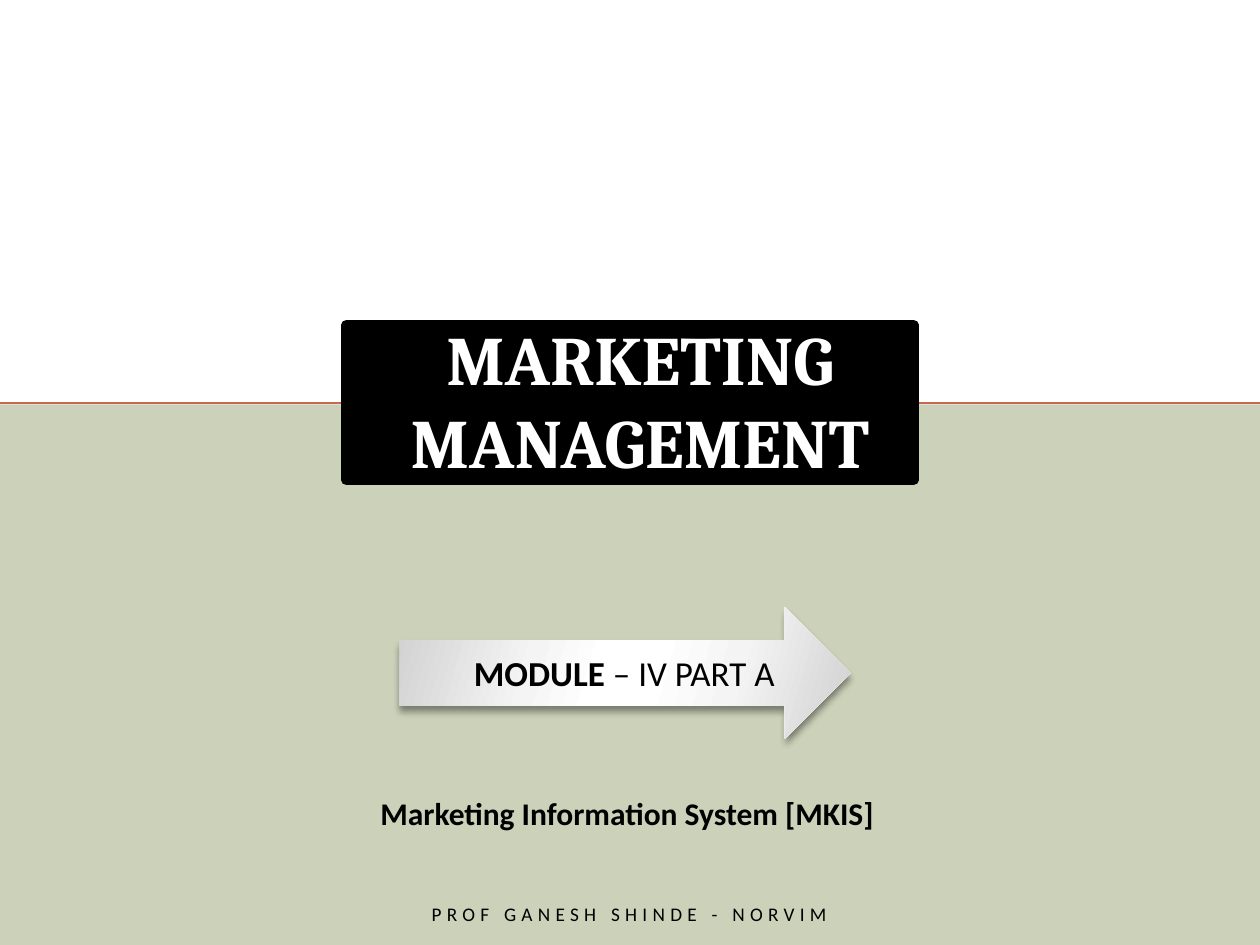
"""Build the opening slide of a marketing management module."""
from lxml import etree
from pptx import Presentation
from pptx.dml.color import RGBColor
from pptx.enum.shapes import MSO_CONNECTOR, MSO_SHAPE
from pptx.enum.text import MSO_ANCHOR, MSO_AUTO_SIZE, PP_ALIGN
from pptx.oxml import parse_xml
from pptx.oxml.ns import qn
from pptx.util import Inches, Pt

RECTANGLE, RIGHT_ARROW = MSO_SHAPE.RECTANGLE, MSO_SHAPE.RIGHT_ARROW
STRAIGHT = MSO_CONNECTOR.STRAIGHT
MIDDLE, BOTTOM = MSO_ANCHOR.MIDDLE, MSO_ANCHOR.BOTTOM
CENTER = PP_ALIGN.CENTER
NO_FIT, GROW = MSO_AUTO_SIZE.NONE, MSO_AUTO_SIZE.SHAPE_TO_FIT_TEXT

BLACK = RGBColor(0x00, 0x00, 0x00)
WHITE = RGBColor(0xFF, 0xFF, 0xFF)
SAGE = RGBColor(0xCC, 0xD1, 0xB9)
RUST = RGBColor(0xC6, 0x69, 0x51)
SILVER = RGBColor(0xD1, 0xD1, 0xD1)
PEARL = RGBColor(0xF4, 0xF4, 0xF4)
SHEEN = [(0, SILVER), (30, PEARL), (45, WHITE), (55, WHITE), (73, PEARL), (100, SILVER)]
DRAWING_NS = "http://schemas.openxmlformats.org/drawingml/2006/main"

deck = Presentation()
deck.slide_width, deck.slide_height = Inches(10), Inches(7.5)
slide = deck.slides.add_slide(deck.slide_layouts[5])
shapes = slide.shapes
slide.background.fill.solid()
slide.background.fill.fore_color.rgb = SAGE


def add_block(preset, left, top, width, height, color):
    block = shapes.add_shape(preset, Inches(left), Inches(top), Inches(width), Inches(height))
    block.shadow.inherit = False
    block.fill.solid()
    block.fill.fore_color.rgb = color
    block.line.fill.background()
    return block


def add_label(left, top, width, height, words, size, bold):
    label = shapes.add_textbox(Inches(left), Inches(top), Inches(width), Inches(height))
    label.text_frame.word_wrap = True
    paragraph = label.text_frame.paragraphs[0]
    paragraph.text = words
    paragraph.font.name, paragraph.font.size = "Calibri", Pt(size)
    paragraph.font.bold, paragraph.font.color.rgb = bold, BLACK
    return label.text_frame, paragraph


add_block(RECTANGLE, 0, 0, 10, 3.21, WHITE)

horizon = shapes.add_connector(STRAIGHT, 0, Inches(3.2), deck.slide_width, Inches(3.2))
horizon.line.color.rgb = RUST
horizon.line.width = Pt(1)
etree.SubElement(horizon.element.spPr, qn("a:effectLst"))

title_plate = add_block(RECTANGLE, 2.75, 2.58, 4.5, 1.23, BLACK)
title_plate.line.color.rgb = BLACK
title_plate.line.width = Pt(6)

title = shapes.title
title.element.getparent().append(title.element)
title.left, title.top, title.width, title.height = map(Inches, (1.58, 2.5, 7, 1.33))
title_frame = title.text_frame
title_frame.word_wrap, title_frame.auto_size = True, NO_FIT
title_frame.vertical_anchor = BOTTOM
title_frame.margin_left = title_frame.margin_right = Inches(0.2)
title_frame.margin_top, title_frame.margin_bottom = Inches(0.05), 0
heading = title_frame.paragraphs[0]
heading.text = "MARKETING MANAGEMENT"
heading.alignment, heading.space_before = CENTER, Pt(4)
heading.font.name, heading.font.size = "Cambria", Pt(39.6)
heading.font.bold, heading.font.color.rgb = True, WHITE

footer_frame, author = add_label(1.58, 7.09, 6.83, 0.32, "PROF GANESH SHINDE - NORVIM", 11, False)
footer_frame.vertical_anchor = MIDDLE
author.alignment = CENTER
author.runs[0].font.bold = False
author.runs[0].element.get_or_add_rPr().set("spc", "300") if hasattr(author.runs[0], "element") else author.runs[0].font._element.set("spc", "300")

module_arrow = add_block(RIGHT_ARROW, 3.17, 4.82, 3.58, 1.04, WHITE)
stops = "".join(
    f'<a:gs pos="{share * 1000}"><a:srgbClr val="{color}"/></a:gs>' for share, color in SHEEN
)
arrow_properties = module_arrow.element.spPr
arrow_properties.replace(
    arrow_properties.find(qn("a:solidFill")),
    parse_xml(
        f'<a:gradFill xmlns:a="{DRAWING_NS}" rotWithShape="1"><a:gsLst>{stops}</a:gsLst>'
        '<a:lin ang="960000" scaled="0"/></a:gradFill>'
    ),
)
arrow_properties.find(qn("a:effectLst")).append(
    parse_xml(
        f'<a:outerShdw xmlns:a="{DRAWING_NS}" blurRad="{Pt(4)}" dist="{Pt(3.3)}" dir="5400000"'
        ' rotWithShape="0"><a:srgbClr val="000000"><a:alpha val="40000"/></a:srgbClr></a:outerShdw>'
    )
)

module_frame, module = add_label(3.46, 5.1, 2.99, 0.52, "MODULE", 20, False)
module_frame.vertical_anchor = MIDDLE
module_frame.margin_left = module_frame.margin_right = 0
module_frame.margin_top = module_frame.margin_bottom = Inches(0.22)
module.alignment, module.line_spacing = CENTER, 0.9
module.runs[0].font.bold = True
module.add_run().text = " – IV PART A"

topic_frame, topic = add_label(2.92, 6.25, 4.5, 0.4, "Marketing Information System [MKIS]", 18, True)
topic_frame.auto_size = GROW

deck.save("out.pptx")
